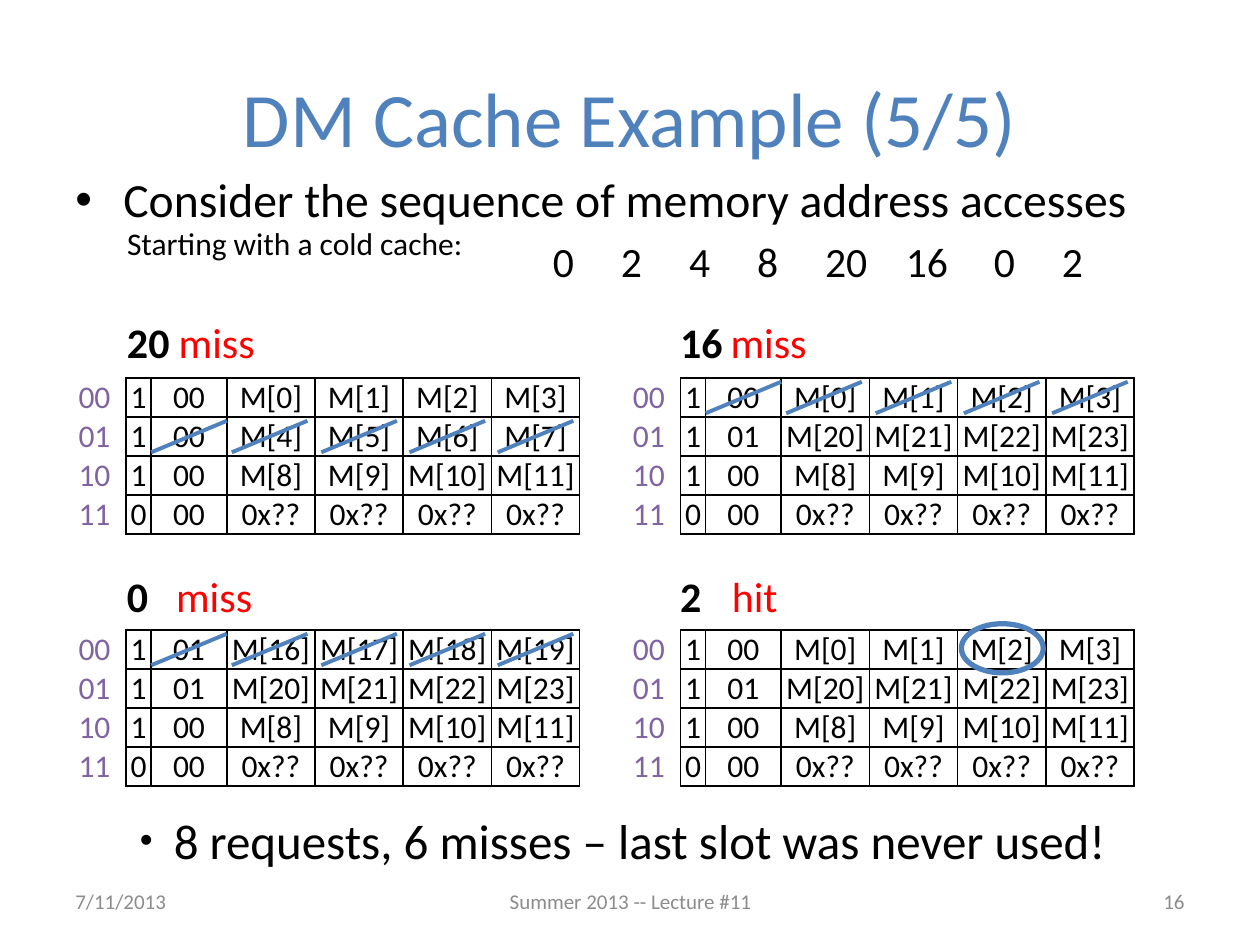
import pptx
import pptx.util
import pptx.dml.color
import pptx.enum.text
import pptx.enum.shapes
import pptx.oxml
import pptx.oxml.ns
from lxml import etree

PX = 9144  # 100 px to the inch
BLUE, BLACK, RED, GREY, PURPLE = "4F81BD", "000000", "FF0000", "8C8C8C", "8064A2"
ALIGN = pptx.enum.text.PP_ALIGN
MID = pptx.enum.text.MSO_ANCHOR.MIDDLE
FIT = pptx.enum.text.MSO_AUTO_SIZE.SHAPE_TO_FIT_TEXT
qn = pptx.oxml.ns.qn
rgb = pptx.dml.color.RGBColor.from_string


def style(para, size, color, align=ALIGN.LEFT, bold=False):
    para.alignment = align
    for run in para.runs:
        font = run.font
        font.name, font.size, font.bold = "Calibri", pptx.util.Pt(size), bold
        font.color.rgb = rgb(color)


def write(box, text, size, color, align=ALIGN.LEFT, bold=False, wrap=True):
    shape = slide.shapes.add_textbox(*[n * PX for n in box])
    frame = shape.text_frame
    frame.text = text
    frame.word_wrap = wrap
    if not wrap:
        frame.auto_size = FIT
    style(frame.paragraphs[0], size, color, align, bold)
    return frame


deck = pptx.Presentation()
deck.slide_width, deck.slide_height = 1000 * PX, 750 * PX
slide = deck.slides.add_slide(deck.slide_layouts[6])

# Title and footer
title = write((50, 30, 900, 125), "DM Cache Example (5/5)", 44, BLUE, ALIGN.CENTER)
title.vertical_anchor = MID
for left, width, text, align in [
    (50, 233, "7/11/2013", ALIGN.LEFT),
    (342, 317, "Summer 2013 -- Lecture #11", ALIGN.CENTER),
    (717, 233, "16", ALIGN.RIGHT),
]:
    write((left, 695, width, 40), text, 12, GREY, align).vertical_anchor = MID

# Bulleted lines
body = write((50, 130, 858, 89),
             "Consider the sequence of memory address accesses", 27.2, BLACK)
note = write((50, 640, 892, 53),
             "8 requests, 6 misses – last slot was never used!", 28, BLACK)
note.margin_left = note.margin_right = 7 * PX
note.margin_top = note.margin_bottom = 3 * PX
for frame, left, hang, size in [(body, 38, 38, 100), (note, 81, 27, 75)]:
    props = frame.paragraphs[0]._p.get_or_add_pPr()
    props.set("marL", str(left * PX))
    props.set("indent", str(-hang * PX))
    etree.SubElement(props, qn("a:buSzPct"), val=str(size * 1000))
    etree.SubElement(props, qn("a:buFont"), typeface="Arial")
    etree.SubElement(props, qn("a:buChar"), char="•")

# Address sequence on tab stops
seq = body.add_paragraph()
seq.text = "\t0\t2\t4\t8\t20\t16\t0\t2"
style(seq, 23.8, BLACK)
seq.space_before = pptx.util.Pt(4.8)
tabs = etree.SubElement(seq._p.get_or_add_pPr(), qn("a:tabLst"))
for stop in (379, 433, 487, 541, 595, 659, 729, 783):
    etree.SubElement(tabs, qn("a:tab"), pos=str(stop * PX), algn="l")
write((91, 173, 375, 40), "Starting with a cold cache:", 18, BLACK)

# Cache rows: valid bit, tag, four data blocks
zero = "1 00 M[0] M[1] M[2] M[3]"
four = "1 00 M[4] M[5] M[6] M[7]"
eight = "1 00 M[8] M[9] M[10] M[11]"
sixteen = "1 01 M[16] M[17] M[18] M[19]"
twenty = "1 01 M[20] M[21] M[22] M[23]"
empty = "0 00 0x?? 0x?? 0x?? 0x??"
index = ["00", "01", "10", "11"]
ROW = 31

# Each state: left, top, address, its width, result, its left and width, rows, struck row
states = [
    (100, 300, "20", 54, "miss", 132, 81, [zero, four, eight, empty], 1),
    (540, 300, "16", 54, "miss", 570, 81, [zero, twenty, eight, empty], 0),
    (100, 500, "0", 37, "miss", 130, 81, [sixteen, twenty, eight, empty], 0),
    (540, 500, "2", 37, "hit", 571, 57, [zero, twenty, eight, empty], None),
]
for left, top, addr, wide, result, start, span, rows, struck in states:
    # Access label
    label = top - 54 if top == 300 else top - 52
    edge = left - 9 if left == 100 else left - 10
    write((edge, label, wide, 50), addr, 24, BLACK, bold=True, wrap=False)
    write((start, label, span, 50), result, 24, RED, wrap=False)

    # Index column and cache grid
    for x, cols, lines, color, ruled in [
        (left - 40, [30], index, PURPLE, False),
        (left, [20, 60] + [70] * 4, rows, BLACK, True),
    ]:
        frame = slide.shapes.add_table(len(lines), len(cols), x * PX, top * PX,
                                       sum(cols) * PX, ROW * len(lines) * PX)
        table = frame.table
        table.first_row = table.horz_banding = False
        plain = table._tbl.tblPr.find(qn("a:tableStyleId"))
        plain.text = "{2D5ABB26-0587-4C30-8999-92F81FD0307C}"
        for col, width in zip(table.columns, cols):
            col.width = width * PX
        for r, line in enumerate(lines):
            table.rows[r].height = ROW * PX
            for c, text in enumerate(line.split()):
                cell = table.cell(r, c)
                cell.text_frame.text = text
                style(cell.text_frame.paragraphs[0], 18, color, ALIGN.CENTER)
                cell.margin_left = cell.margin_right = 0
                cell.margin_top = cell.margin_bottom = 0
                if not ruled:
                    cell.vertical_anchor = MID
                    cell.fill.background()
                    continue
                props = cell._tc.get_or_add_tcPr()
                for side in ("lnL", "lnR", "lnT", "lnB"):
                    rule = etree.SubElement(props, qn("a:" + side), w="12700")
                    ink = etree.SubElement(rule, qn("a:solidFill"))
                    etree.SubElement(ink, qn("a:srgbClr"), val=BLACK)
                cell.fill.solid()
                cell.fill.fore_color.rgb = rgb("FFFFFF")

    # Strokes through the replaced row
    if struck is not None:
        group = slide.shapes.add_group_shape()
        low = top + ROW * struck + 28
        for shift in (20, 84, 155, 225, 295):
            x = left + shift
            line = group.shapes.add_connector(
                pptx.enum.shapes.MSO_CONNECTOR.STRAIGHT,
                x * PX, low * PX, (x + 60) * PX, (low - 25) * PX)
            line.line.color.rgb = rgb(BLUE)
            line.line.width = pptx.util.Pt(2.25)
            etree.SubElement(line._element.spPr, qn("a:effectLst"))

# Ring around the hit
ring = slide.shapes.add_shape(pptx.enum.shapes.MSO_SHAPE.OVAL,
                              763 * PX, 495 * PX, 65 * PX, 39 * PX)
ring.shadow.inherit = False
ring.fill.background()
ring.line.color.rgb = rgb(BLUE)
ring.line.width = pptx.util.Pt(3)

deck.save("out.pptx")
